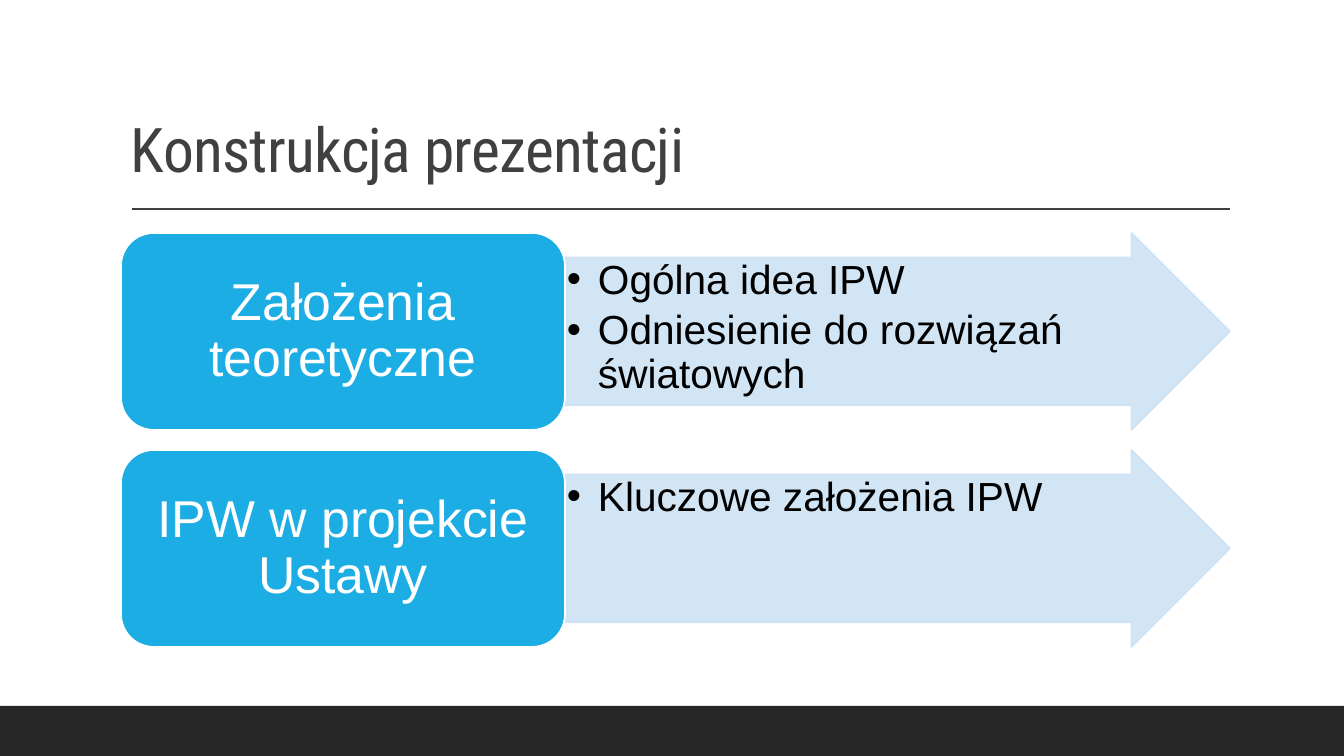
from dataclasses import dataclass

from lxml import etree
from pptx import Presentation, util as u
from pptx.dml import color
from pptx.enum import shapes, text
from pptx.oxml import ns


@dataclass(frozen=True)
class Theme:
    """Colours, fonts and type sizes of the slide."""
    band: str = "262626"
    ink: str = "404040"
    arrow: str = "CDE3F5"
    box: str = "1CADE4"
    white: str = "FFFFFF"
    black: str = "000000"
    head_font: str = "Roboto Condensed"
    body_font: str = "Arial"
    title_size: int = 44
    label_size: int = 37
    list_size: int = 29


def px(n):
    """Turn pixels into EMU."""
    return u.Emu(round(n * 914400 / 100.8))


def rgb(value):
    """Turn a hex string into a colour."""
    return color.RGBColor.from_string(value)


def assign(target, **values):
    """Set each named attribute on the target."""
    for name, value in values.items():
        setattr(target, name, value)


class Deck:
    """Holds the style and the current slide and draws its elements."""

    def __init__(self, theme, width, height):
        """Open a presentation with one slide of a title and two lists."""
        self.theme = theme
        self.prs = Presentation()
        assign(self.prs, slide_width=px(width), slide_height=px(height))
        self.s = self.prs.slides.add_slide(self.prs.slide_layouts[3])

    def place(self, sp, box):
        """Move a placeholder to a box and bring it to the front."""
        assign(sp, **dict(zip(("left", "top", "width", "height"), map(px, box))))
        self.s.shapes.element.append(sp.element)

    def fill_text(self, sp, lines, font, size, ink, margins, anchor, **layout):
        """Fill a shape with formatted paragraphs."""
        tf = sp.text_frame
        sides = ("margin_left", "margin_top", "margin_right", "margin_bottom")
        assign(tf, word_wrap=True, auto_size=text.MSO_AUTO_SIZE.NONE,
               vertical_anchor=anchor, **dict(zip(sides, map(px, margins))))
        for i, line in enumerate(lines):
            p = tf.add_paragraph() if i else tf.paragraphs[0]
            assign(p, line_spacing=0.9, space_before=u.Pt(0), **layout)
            r = p.add_run()
            r.text = line
            assign(r.font, name=font, size=u.Pt(size))
            r.font.color.rgb = rgb(ink)

    def title(self, words, box):
        """Add the slide title."""
        t, sp = self.theme, self.s.shapes.title
        self.place(sp, box)
        self.fill_text(sp, [words], t.head_font, t.title_size, t.ink,
                       (10, 5, 10, 5), text.MSO_ANCHOR.BOTTOM,
                       alignment=text.PP_ALIGN.LEFT)
        for props in sp.element.iter(ns.qn("a:rPr")):
            props.set("spc", "-50")

    def bullets(self, idx, lines, box):
        """Add a bulleted list in a body placeholder."""
        t, sp = self.theme, self.s.placeholders[idx]
        self.place(sp, box)
        self.fill_text(sp, lines, t.body_font, t.list_size, t.black,
                       (2, 2, 2, 2), text.MSO_ANCHOR.TOP,
                       alignment=text.PP_ALIGN.LEFT, space_after=u.Pt(5))
        for props in sp.element.iter(ns.qn("a:pPr")):
            assign_indent = {"marL": px(31), "indent": px(-31)}
            for name, value in assign_indent.items():
                props.set(name, str(value))
            etree.SubElement(props, ns.qn("a:buChar"), char="•")

    def shape(self, kind, box, fill, line=None, alpha=None):
        """Add a filled preset shape."""
        sp = self.s.shapes.add_shape(kind, *map(px, box))
        sp.shadow.inherit = False
        sp.fill.solid()
        sp.fill.fore_color.rgb = rgb(fill)
        if line:
            sp.line.color.rgb = rgb(line)
            sp.line.width = u.Pt(1.25)
        else:
            sp.line.fill.background()
        if alpha:
            for clr in sp.element.spPr.iter(ns.qn("a:srgbClr")):
                etree.SubElement(clr, ns.qn("a:alpha"), val=str(alpha * 1000))
        return sp

    def arrow(self, box):
        """Add a wide translucent arrow."""
        t = self.theme
        sp = self.shape(shapes.MSO_SHAPE.RIGHT_ARROW, box, t.arrow, t.arrow, 90)
        sp.adjustments[0] = 0.75
        sp.adjustments[1] = 0.5

    def label(self, words, box):
        """Add a rounded box with a centred label."""
        t = self.theme
        sp = self.shape(shapes.MSO_SHAPE.ROUNDED_RECTANGLE, box, t.box, t.white)
        self.fill_text(sp, [words], t.body_font, t.label_size, t.white,
                       (15, 8, 15, 8), text.MSO_ANCHOR.MIDDLE,
                       alignment=text.PP_ALIGN.CENTER)

    def rule(self, x1, x2, y):
        """Add a thin horizontal line."""
        c = self.s.shapes.add_connector(
            shapes.MSO_CONNECTOR.STRAIGHT, px(x1), px(y), px(x2), px(y))
        c.line.color.rgb = rgb(self.theme.ink)
        c.line.width = u.Pt(1)
        etree.SubElement(c.element.spPr, ns.qn("a:effectLst"))


def main():
    """Build the slide and save it."""
    deck = Deck(Theme(), 1344, 756)
    deck.shape(shapes.MSO_SHAPE.RECTANGLE, (0, 706, 1344, 50), deck.theme.band)
    deck.rule(132, 1230, 209)
    deck.title("Konstrukcja prezentacji", (121, 31, 1109, 160))
    rows = [
        ("Założenia teoretyczne",
         ["Ogólna idea IPW", "Odniesienie do rozwiązań światowych"]),
        ("IPW w projekcie Ustawy", ["Kluczowe założenia IPW"]),
    ]
    for i, (label, lines) in enumerate(rows):
        top = 233 + 217 * i
        deck.arrow((565, top, 665, 197))
        deck.bullets(i + 1, lines, (565, top + 24, 592, 148))
        deck.label(label, (121, top, 444, 197))
    deck.prs.save("out.pptx")


if __name__ == "__main__":
    main()
